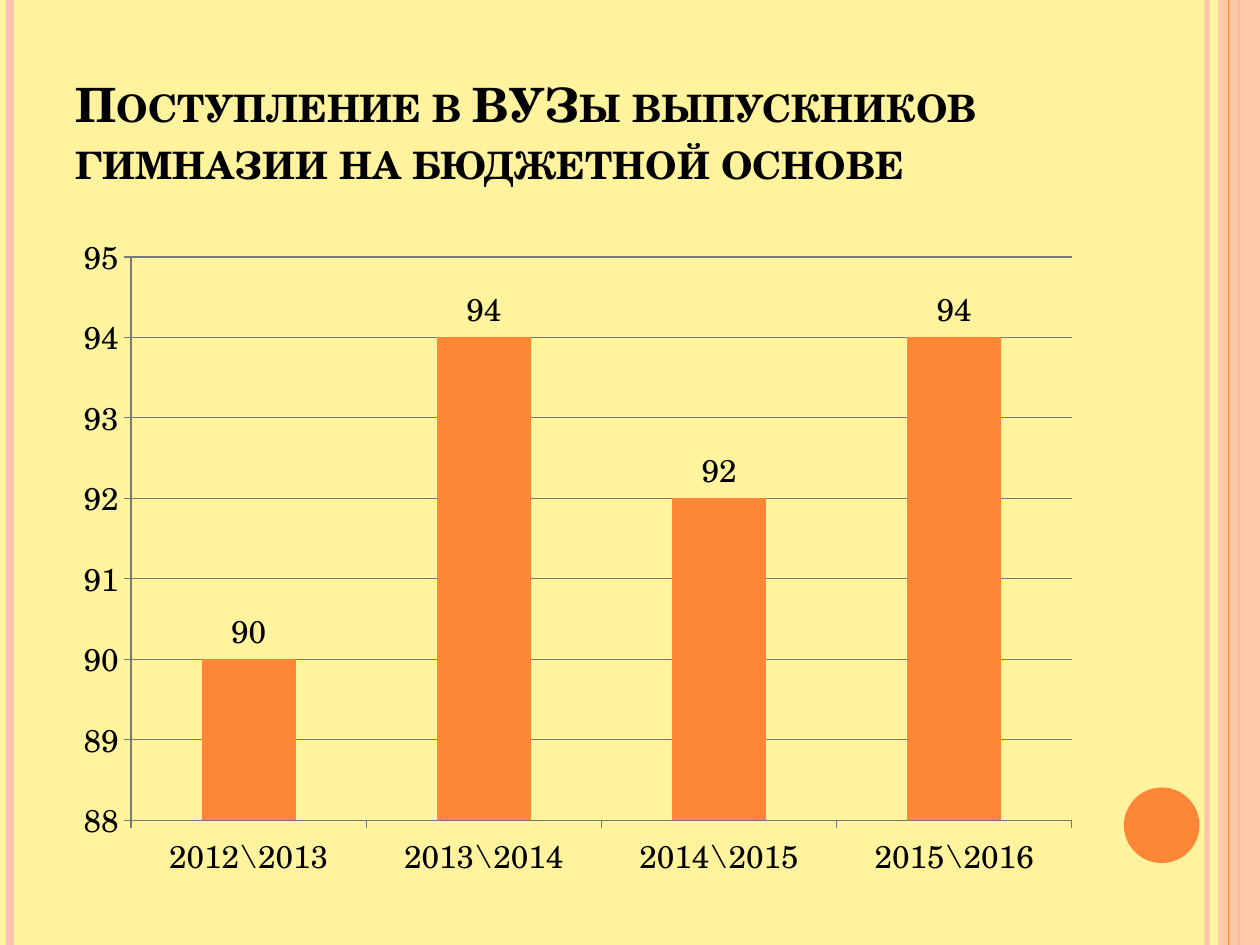
from lxml import etree
from pptx import Presentation
from pptx.chart.data import CategoryChartData
from pptx.dml.color import RGBColor
from pptx.enum.chart import XL_CHART_TYPE, XL_LABEL_POSITION, XL_TICK_MARK
from pptx.enum.shapes import MSO_CONNECTOR, MSO_SHAPE
from pptx.enum.text import MSO_ANCHOR, MSO_AUTO_SIZE, PP_ALIGN
from pptx.oxml.ns import qn
from pptx.util import Inches, Pt

COLUMN = XL_CHART_TYPE.COLUMN_CLUSTERED
LABEL_ABOVE = XL_LABEL_POSITION.OUTSIDE_END
TICK_OUTSIDE = XL_TICK_MARK.OUTSIDE
STRAIGHT = MSO_CONNECTOR.STRAIGHT
RECTANGLE, OVAL = MSO_SHAPE.RECTANGLE, MSO_SHAPE.OVAL

# Content
TITLE = "Поступление в ВУЗы выпускников гимназии на бюджетной основе"
ADMISSIONS = {"2012\\2013": 90, "2013\\2014": 94, "2014\\2015": 92, "2015\\2016": 94}

# Style
FONT = "TeX Gyre Schola"
CREAM, PINK, ORANGE, BLACK, GRAY = "FFF39D", "FEC3AE", "FE8637", "000000", "787878"
WIDTH, HEIGHT = 10, 7.5
LEFT, CONTENT_WIDTH = 0.5, 8.17

# Vertical stripes: x, colour, points, opacity in percent
STRIPES_BELOW_BAND = [(9.58, PINK, 3, 93), (0.08, PINK, 4.5, 100), (9.83, ORANGE, 1.5, 100)]
STRIPES_ABOVE_BAND = [(9.75, ORANGE, 0.75, 100)]


def color(value):
    return RGBColor.from_string(value)


def set_opacity(element, percent):
    if percent < 100:
        for color_element in element.iter(qn("a:srgbClr")):
            etree.SubElement(color_element, qn("a:alpha"), val=str(percent * 1000))


def style_font(font, size, bold=False):
    font.name, font.size, font.bold = FONT, Pt(size), bold
    font.color.rgb = color(BLACK)


def style_line(line, line_color, points):
    line.color.rgb = color(line_color)
    line.width = Pt(points)


def add_stripes(slide, stripes):
    for x, stripe_color, points, opacity in stripes:
        stripe = slide.shapes.add_connector(STRAIGHT, Inches(x), 0, Inches(x), Inches(HEIGHT))
        style_line(stripe.line, stripe_color, points)
        properties = stripe._element.spPr
        set_opacity(properties, opacity)
        etree.SubElement(properties, qn("a:effectLst"))


def add_plain_shape(slide, kind, box, fill_color, opacity=100):
    shape = slide.shapes.add_shape(kind, *map(Inches, box))
    shape.shadow.inherit = False
    shape.fill.solid()
    shape.fill.fore_color.rgb = color(fill_color)
    shape.line.fill.background()
    set_opacity(shape._element.spPr, opacity)


def fill_title(title):
    title.left, title.top = Inches(LEFT), Inches(0.3)
    title.width, title.height = Inches(CONTENT_WIDTH), Inches(1.25)
    frame = title.text_frame
    frame.word_wrap = True
    frame.auto_size = MSO_AUTO_SIZE.NONE
    frame.vertical_anchor = MSO_ANCHOR.BOTTOM
    paragraph = frame.paragraphs[0]
    paragraph.alignment = PP_ALIGN.LEFT
    run = paragraph.add_run()
    run.text = TITLE
    style_font(run.font, 27, bold=True)
    run.font._element.set("cap", "small")


def add_admissions_chart(slide):
    data = CategoryChartData()
    data.categories = list(ADMISSIONS)
    data.add_series("Series 1", list(ADMISSIONS.values()))
    box = map(Inches, (LEFT, 1.75, CONTENT_WIDTH, 5.33))
    chart = slide.shapes.add_chart(COLUMN, *box, data).chart
    chart.has_title = False
    chart.has_legend = False
    style_font(chart.font, 18)

    # Axes and gridlines
    for axis in (chart.category_axis, chart.value_axis):
        axis.major_tick_mark = TICK_OUTSIDE
        style_line(axis.format.line, GRAY, 0.75)
    value_axis = chart.value_axis
    value_axis.minimum_scale, value_axis.maximum_scale = 88, 95
    value_axis.major_unit = 1
    value_axis.has_major_gridlines = True
    style_line(value_axis.major_gridlines.format.line, GRAY, 0.75)

    # Columns and their values
    plot = chart.plots[0]
    plot.gap_width = 150
    plot.vary_by_categories = False
    column_fill = plot.series[0].format.fill
    column_fill.solid()
    column_fill.fore_color.rgb = color(ORANGE)
    plot.has_data_labels = True
    plot.data_labels.show_value = True
    plot.data_labels.position = LABEL_ABOVE
    style_font(plot.data_labels.font, 18)


def main():
    presentation = Presentation()
    presentation.slide_width, presentation.slide_height = Inches(WIDTH), Inches(HEIGHT)
    slide = presentation.slides.add_slide(presentation.slide_layouts.get_by_name("Title Only"))
    slide.background.fill.solid()
    slide.background.fill.fore_color.rgb = color(CREAM)

    # Side decoration
    add_stripes(slide, STRIPES_BELOW_BAND)
    add_plain_shape(slide, RECTANGLE, (9.67, 0, 0.33, HEIGHT), PINK, 87)
    add_stripes(slide, STRIPES_ABOVE_BAND)
    add_plain_shape(slide, OVAL, (8.92, 6.25, 0.6, 0.6), ORANGE)

    # Title and chart
    fill_title(slide.shapes.title)
    add_admissions_chart(slide)
    presentation.save("out.pptx")


if __name__ == "__main__":
    main()
